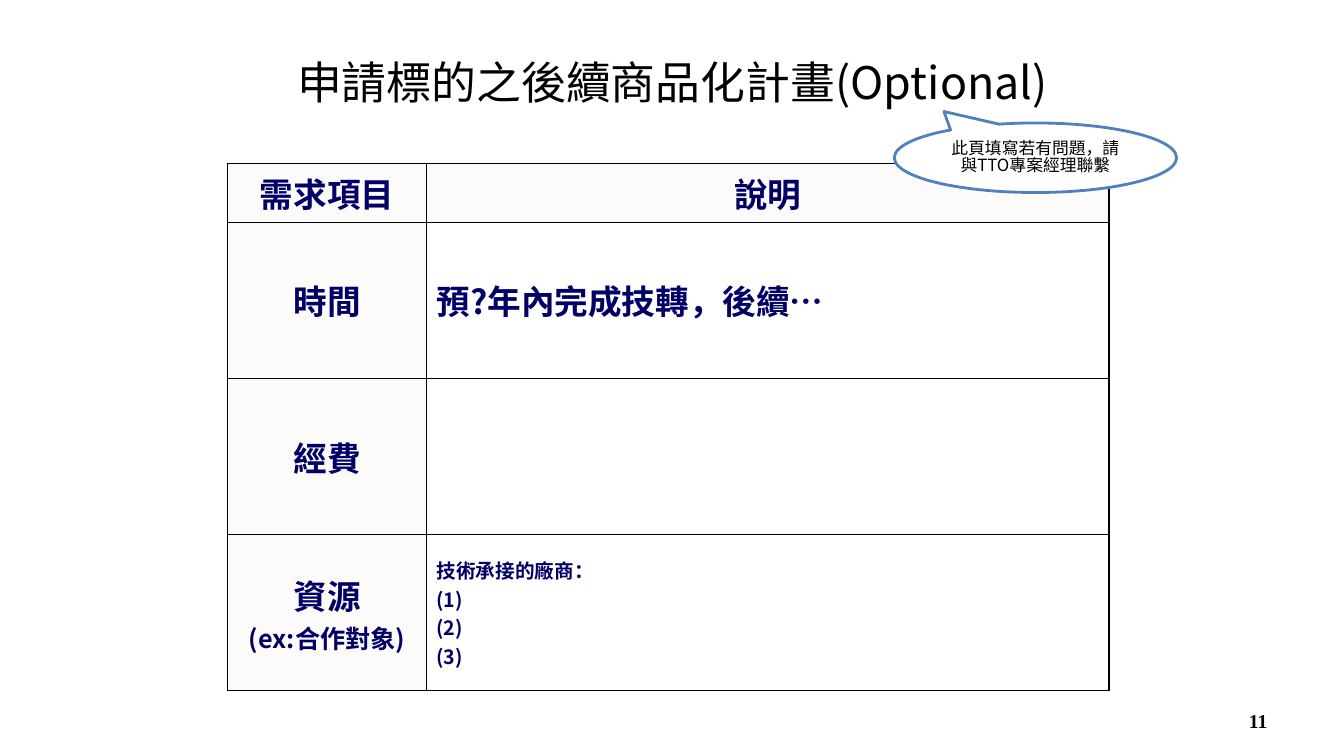
from pptx import Presentation
from pptx.dml.color import RGBColor
from pptx.enum.shapes import MSO_SHAPE
from pptx.enum.text import MSO_ANCHOR, PP_ALIGN
from pptx.oxml import parse_xml
from pptx.oxml.ns import nsdecls
from pptx.util import Inches, Pt

SANS = "Noto Sans CJK SC"
NAVY = "000066"


def color(value):
    return RGBColor.from_string(value)


def write(frame, lines, align, ink="000000", bold=False, face=SANS):
    """Fill a text frame with one paragraph per (text, size) pair."""
    frame.word_wrap = True
    for index, (text, size) in enumerate(lines):
        para = frame.add_paragraph() if index else frame.paragraphs[0]
        para.alignment = align
        span = para.add_run()
        span.text = text
        for name, value in {"size": Pt(size), "bold": bold, "name": face}.items():
            setattr(span.font, name, value)
        span.font.color.rgb = color(ink)
        span.font._element.append(
            parse_xml(f'<a:ea {nsdecls("a")} typeface="{face}"/>'))


deck = Presentation()
deck.slide_width, deck.slide_height = Inches(13.33), Inches(7.5)
page = deck.slides.add_slide(deck.slide_layouts[5])

# Title
title = page.shapes.title
title.left, title.top = Inches(2.17), Inches(0.3)
title.width, title.height = Inches(9), Inches(1.01)
title.text_frame.vertical_anchor = MSO_ANCHOR.MIDDLE
write(title.text_frame, [("申請標的之後續商品化計畫(Optional)", 32)], PP_ALIGN.CENTER)

# Requirements table
rows = [
    ([("需求項目", 24)], [("說明", 24)]),
    ([("時間", 24)], [("預?年內完成技轉，後續…", 24)]),
    ([("經費", 24)], []),
    ([("資源", 24), ("(ex:合作對象)", 18)],
     [("技術承接的廠商：", 14), ("(1)", 14), ("(2)", 14), ("(3)", 14)]),
]
table = page.shapes.add_table(len(rows), 2, Inches(2.26), Inches(1.62),
                              Inches(8.74), Inches(5.15)).table
for column, width in zip(table.columns, (1.97, 6.77)):
    column.width = Inches(width)
for row_index, row in enumerate(rows):
    table.rows[row_index].height = Inches(1.55 if row_index else 0.5)
    for column_index, lines in enumerate(row):
        cell = table.cell(row_index, column_index)
        heading = row_index == 0 or column_index == 0
        cell.vertical_anchor = MSO_ANCHOR.MIDDLE
        write(cell.text_frame, lines,
              PP_ALIGN.CENTER if heading else PP_ALIGN.LEFT, NAVY, True)
        # Borders come before the fill in the cell properties
        for side in ("lnL", "lnR", "lnT", "lnB"):
            cell._tc.get_or_add_tcPr().append(parse_xml(
                f'<a:{side} {nsdecls("a")} w="12700"><a:solidFill>'
                f'<a:srgbClr val="000000"/></a:solidFill></a:{side}>'))
        if heading:
            cell.fill.solid()
            cell.fill.fore_color.rgb = color("FCFBF9")
        else:
            cell.fill.background()

# Callout
callout = page.shapes.add_shape(MSO_SHAPE.OVAL_CALLOUT, Inches(8.87), Inches(1.22),
                                Inches(2.8), Inches(0.69))
callout.adjustments[0], callout.adjustments[1] = -0.324, -0.665
callout.shadow.inherit = False
callout.fill.solid()
callout.fill.fore_color.rgb = color("FFFFFF")
callout.line.color.rgb = color("4F81BD")
callout.line.width = Pt(2)
callout.text_frame.vertical_anchor = MSO_ANCHOR.MIDDLE
write(callout.text_frame, [("此頁填寫若有問題，請與TTO專案經理聯繫", 12)], PP_ALIGN.CENTER)
callout.text_frame.paragraphs[0].line_spacing = 0.87

# Page number
number = page.shapes.add_textbox(Inches(9.56), Inches(6.95), Inches(3.11), Inches(0.4))
number.text_frame.vertical_anchor = MSO_ANCHOR.MIDDLE
write(number.text_frame, [("11", 14)], PP_ALIGN.RIGHT, bold=True, face="Times New Roman")

deck.save("out.pptx")
